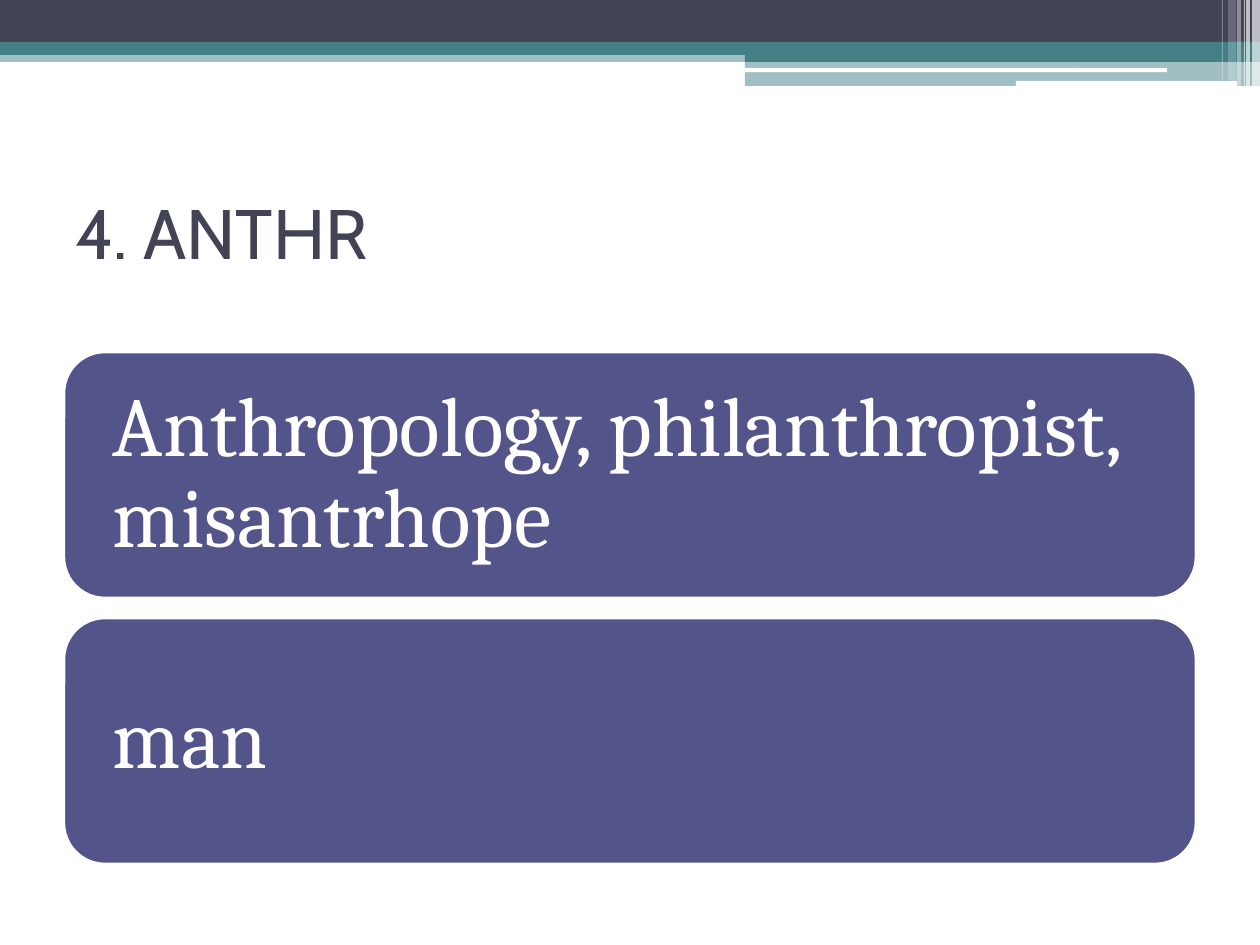
from lxml import etree
from pptx import Presentation
from pptx import util as u
from pptx.dml.color import RGBColor
from pptx.enum import shapes, text
from pptx.oxml.ns import qn

PX = u.Inches(1) / 126
WHITE, DARK, TEAL, PURPLE = "FFFFFF", "424456", "438086", "53548A"
RECT = shapes.MSO_SHAPE.RECTANGLE
ROUND = shapes.MSO_SHAPE.ROUNDED_RECTANGLE

TITLE = "4. ANTHR"
CARDS = ["Anthropology, philanthropist, misantrhope", "man"]
CARD_LEFT, CARD_TOP, CARD_WIDTH, CARD_HEIGHT, CARD_GAP = 64, 352, 1132, 246, 20

BANDS = [
    (RECT, 0, 50, 1260, 12, TEAL, 50),
    (RECT, 0, 0, 1260, 43, DARK, 100),
    (RECT, 0, 42, 1260, 13, TEAL, 100),
    (RECT, 745, 49, 515, 13, TEAL, 100),
    (RECT, 745, 61, 515, 25, TEAL, 50),
    (ROUND, 745, 68, 422, 4, WHITE, 100),
    (ROUND, 1016, 81, 221, 5, WHITE, 100),
]
STRIPES = [
    (1252, 8, 86, 65),
    (1246, 4, 86, 65),
    (1244, 1, 86, 60),
    (1237, 4, 86, 40),
    (1228, 8, 81, 20),
    (1222, 1, 81, 30),
]


def px(value):
    return u.Emu(round(value * PX))


def color(value):
    return RGBColor.from_string(value)


def add_block(slide, kind, left, top, width, height, fill, opacity=100):
    shape = slide.shapes.add_shape(kind, px(left), px(top), px(width), px(height))
    shape.shadow.inherit = False
    shape.line.fill.background()
    shape.fill.solid()
    shape.fill.fore_color.rgb = color(fill)
    if opacity < 100:
        solid = shape.fill._xPr.find(qn("a:solidFill"))
        etree.SubElement(solid[0], qn("a:alpha"), val=str(opacity * 1000))
    return shape


def write(shape, content, size, font, fill, inset=None, spacing=None):
    frame = shape.text_frame
    frame.word_wrap = True
    frame.auto_size = text.MSO_AUTO_SIZE.NONE
    frame.vertical_anchor = text.MSO_ANCHOR.MIDDLE
    if inset is not None:
        frame.margin_left = frame.margin_right = px(inset)
        frame.margin_top = frame.margin_bottom = px(inset)
    paragraph = frame.paragraphs[0]
    paragraph.alignment = text.PP_ALIGN.LEFT
    if spacing:
        paragraph.line_spacing = spacing
    run = paragraph.add_run()
    run.text = content
    run.font.size = u.Pt(size)
    run.font.name = font
    run.font.color.rgb = color(fill)


def main():
    presentation = Presentation()
    presentation.slide_width, presentation.slide_height = px(1260), px(945)
    slide = presentation.slides.add_slide(presentation.slide_layouts[5])

    for band in BANDS:
        add_block(slide, *band)
    for left, width, height, opacity in STRIPES:
        add_block(slide, RECT, left, 0, width, height, WHITE, opacity)

    title = slide.shapes.title
    title.left, title.top, title.width, title.height = map(px, (63, 158, 1134, 147))
    write(title, TITLE, 40, "Cabin", DARK)

    for index, content in enumerate(CARDS):
        top = CARD_TOP + index * (CARD_HEIGHT + CARD_GAP)
        card = add_block(slide, ROUND, CARD_LEFT, top, CARD_WIDTH, CARD_HEIGHT, PURPLE)
        card.line.color.rgb = color(WHITE)
        card.line.width = u.Pt(1.5)
        write(card, content, 48, "Cambria", WHITE, inset=37, spacing=0.9)

    presentation.save("out.pptx")


if __name__ == "__main__":
    main()
